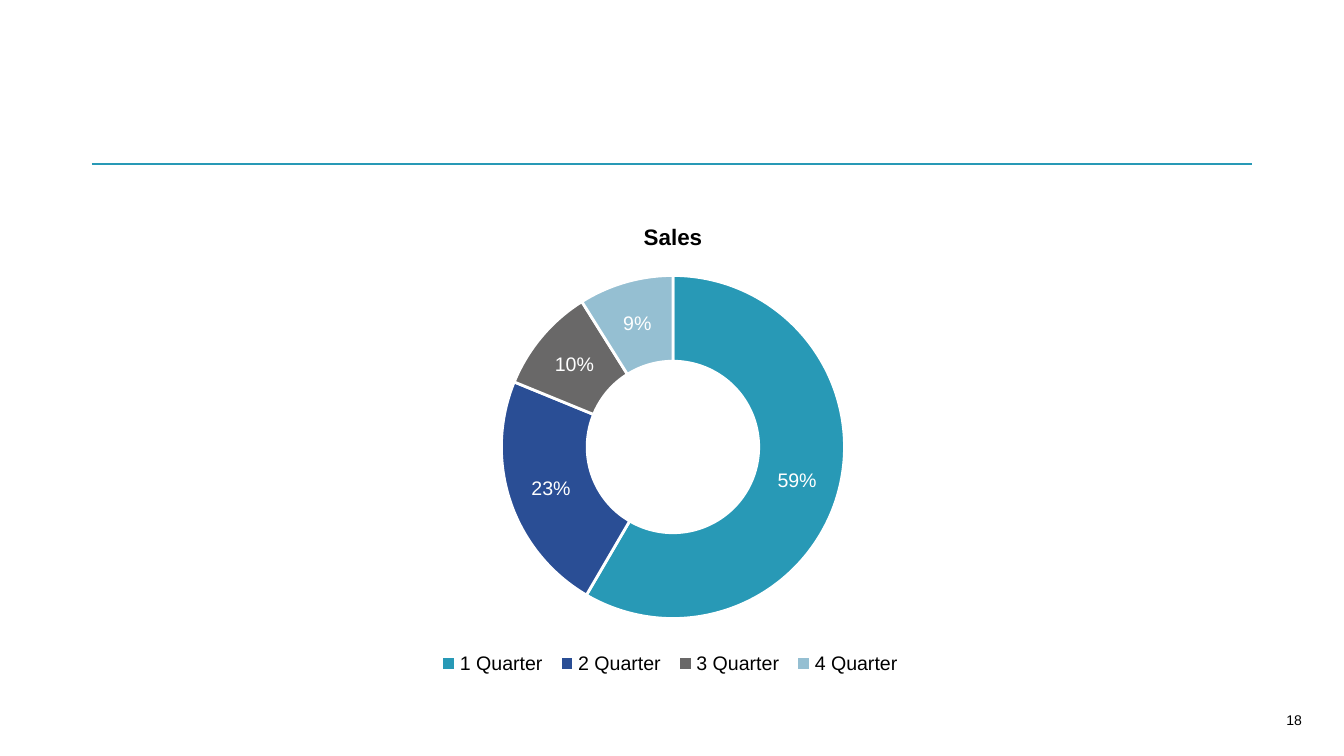
from dataclasses import dataclass

from pptx import Presentation
from pptx.chart.data import CategoryChartData
from pptx.dml.color import RGBColor
from pptx.enum.chart import XL_CHART_TYPE as ChartType, XL_LEGEND_POSITION as LegendPosition
from pptx.enum.shapes import MSO_CONNECTOR as Connector
from pptx.enum.text import MSO_ANCHOR as Anchor, PP_ALIGN as Align
from pptx.oxml.ns import qn
from pptx.util import Pt
from lxml.etree import SubElement

EMU_PER_PX = 914400 / 134.4


@dataclass(frozen=True)
class Theme:
    font: str = "Arial"
    ink: str = "000000"
    paper: str = "FFFFFF"
    accent: str = "2899B6"
    quarters: tuple = ("2899B6", "2A4E95", "696868", "95BFD2")
    heading_size: float = 12
    chart_size: float = 10.5
    number_size: float = 7.5
    rule_width: float = 1
    gap_width: float = 1.5


THEME = Theme()
SALES = {"1 Quarter ": 59, "2 Quarter ": 23, "3 Quarter ": 10, "4 Quarter ": 9}


def px(length):
    return round(length * EMU_PER_PX)


def apply_format(target, values):
    for name, value in values.items():
        setattr(target, name, value)


def style_font(font, size, color, bold=False):
    apply_format(font, {"name": THEME.font, "size": Pt(size), "bold": bold})
    font.color.rgb = RGBColor.from_string(color)


def style_line(line, color, width):
    line.color.rgb = RGBColor.from_string(color)
    line.width = Pt(width)


def add_header_rule(slide, box):
    left, top, width, height = box
    bottom = px(top + height)
    rule = slide.shapes.add_connector(
        Connector.STRAIGHT, px(left), bottom, px(left + width), bottom)
    style_line(rule.line, THEME.accent, THEME.rule_width)
    SubElement(rule._element.spPr, qn("a:effectLst"))


def add_sales_chart(slide, box):
    sales = CategoryChartData()
    sales.categories = list(SALES)
    sales.add_series("Series 1", list(SALES.values()))
    chart = slide.shapes.add_chart(ChartType.DOUGHNUT, *map(px, box), sales).chart
    style_font(chart.font, THEME.chart_size, THEME.ink)

    chart.has_title = True
    heading = chart.chart_title.text_frame
    heading.text = "Sales"
    style_font(heading.paragraphs[0].runs[0].font, THEME.heading_size, THEME.ink, True)

    chart.has_legend = True
    apply_format(chart.legend, {"position": LegendPosition.BOTTOM, "include_in_layout": False})
    style_font(chart.legend.font, THEME.chart_size, THEME.ink)

    ring = chart.plots[0]
    apply_format(ring, {"vary_by_categories": True, "has_data_labels": True})
    ring._element.find(qn("c:holeSize")).set("val", "75")
    apply_format(ring.data_labels, {
        "show_value": True,
        "show_percentage": False,
        "number_format": '0"%"',
        "number_format_is_linked": False,
    })
    style_font(ring.data_labels.font, THEME.chart_size, THEME.paper)

    for index, color in enumerate(THEME.quarters):
        slice_format = ring.series[0].points[index].format
        slice_format.fill.solid()
        slice_format.fill.fore_color.rgb = RGBColor.from_string(color)
        style_line(slice_format.line, THEME.paper, THEME.gap_width)


def add_page_number(slide, box, number):
    frame = slide.shapes.add_textbox(*map(px, box)).text_frame
    apply_format(frame, {
        "word_wrap": True,
        "vertical_anchor": Anchor.MIDDLE,
        "margin_left": px(9),
        "margin_right": 0,
        "margin_top": px(5),
        "margin_bottom": px(5),
    })
    paragraph = frame.paragraphs[0]
    paragraph.alignment = Align.RIGHT
    run = paragraph.add_run()
    run.text = str(number)
    style_font(run.font, THEME.number_size, THEME.ink)


def main():
    deck = Presentation()
    apply_format(deck, {"slide_width": px(1344), "slide_height": px(756)})
    slide = deck.slides.add_slide(deck.slide_layouts[6])
    add_header_rule(slide, (92, 0, 1160, 164))
    add_page_number(slide, (1000, 700, 302, 40), 18)
    add_sales_chart(slide, (238, 203, 870, 477))
    deck.save("out.pptx")


if __name__ == "__main__":
    main()
